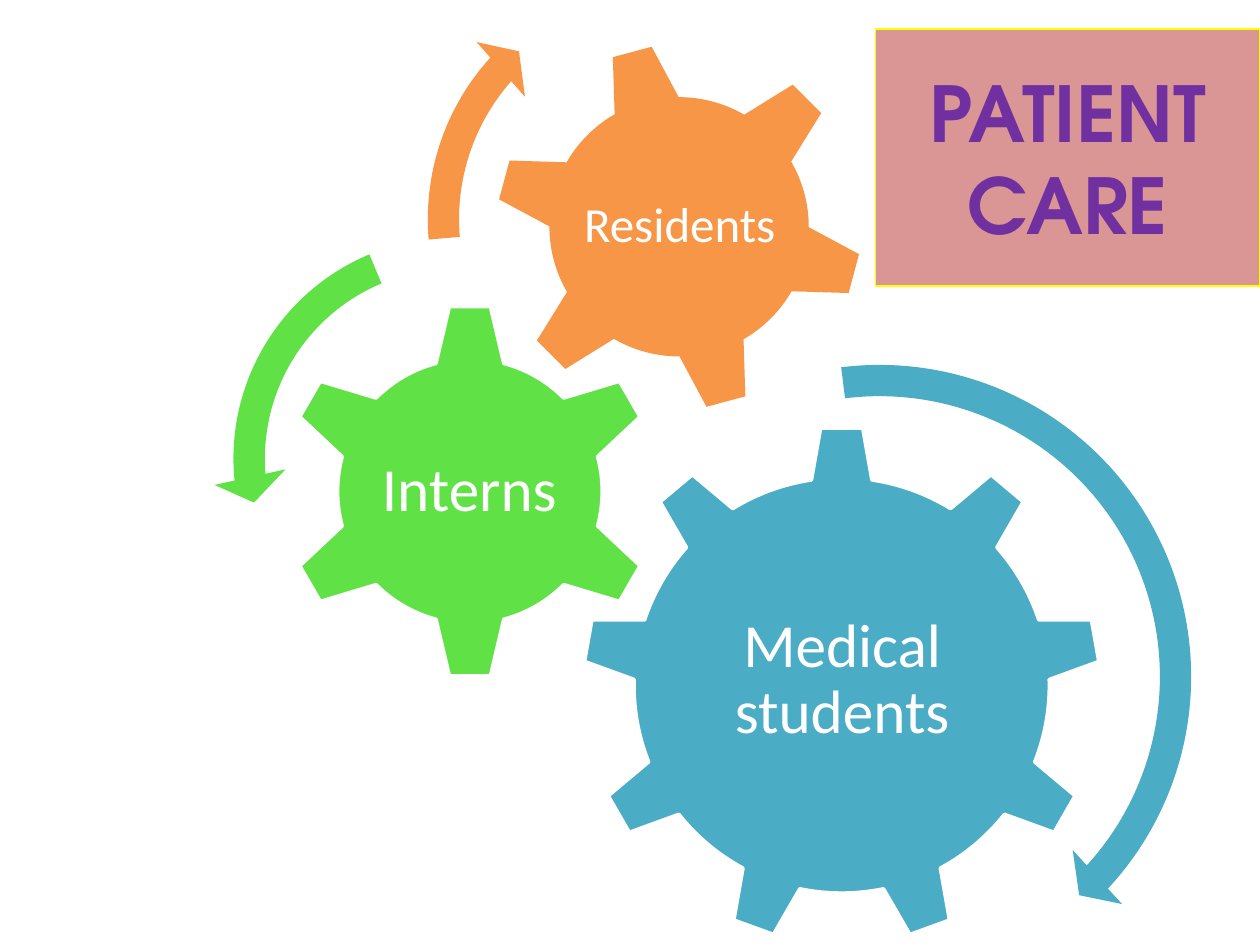
from pptx import Presentation
from pptx.dml.color import RGBColor
from pptx.enum.shapes import MSO_SHAPE
from pptx.enum.text import MSO_ANCHOR, PP_ALIGN
from pptx.util import Inches, Pt


def paint(fmt, color):
    fmt.solid()
    fmt.fore_color.rgb = RGBColor.from_string(color)


def style(frame, font, size, color, bold=False):
    frame.word_wrap = True
    frame.vertical_anchor = MSO_ANCHOR.MIDDLE
    para = frame.paragraphs[0]
    para.alignment = PP_ALIGN.CENTER
    for run in para.runs:
        run.font.name = font
        run.font.size = Pt(size)
        run.font.bold = bold
        paint(run.font.fill, color)


BLUE, GREEN, ORANGE = "4BACC6", "60E146", "F79646"

prs = Presentation()
prs.slide_width, prs.slide_height = Inches(10), Inches(7.5)
slide = prs.slides.add_slide(prs.slide_layouts[5])
shapes = slide.shapes

title = shapes.title
title.left, title.top = Inches(6.95), Inches(0.23)
title.width, title.height = Inches(3.05), Inches(2.04)
title.text_frame.text = "PATIENT CARE"
style(title.text_frame, "TeX Gyre Adventor", 44, "7030A0", True)
paint(title.fill, "D99694")
paint(title.line.fill, "FFFF00")
title.line.width = Pt(0.75)

gears = [
    (MSO_SHAPE.GEAR_9, 4.62, 3.38, 4.12, 0, BLUE,
     "Medical students", 35, (5.45, 4.34, 2.47, 2.12), 0.05),
    (MSO_SHAPE.GEAR_6, 2.23, 2.4, 3, 0, GREEN,
     "Interns", 35, (2.98, 3.16, 1.49, 1.48), 0.05),
    (MSO_SHAPE.GEAR_6, 3.92, 0.33, 2.94, 345, ORANGE,
     "Residents", 28, (4.57, 0.97, 1.65, 1.65), 0.04),
]
for kind, left, top, size, turn, color, label, points, area, inset in gears:
    gear = shapes.add_shape(kind, Inches(left), Inches(top), Inches(size), Inches(size))
    gear.shadow.inherit = False
    gear.rotation = turn
    paint(gear.fill, color)
    if turn:
        gear.line.fill.background()
    else:
        paint(gear.line.fill, "FFFFFF")
        gear.line.width = Pt(2)

    frame = shapes.add_textbox(*map(Inches, area)).text_frame
    frame.margin_left = frame.margin_right = Inches(inset)
    frame.margin_top = frame.margin_bottom = Inches(inset)
    frame.text = label
    frame.paragraphs[0].line_spacing = 0.9
    style(frame, "Calibri", points, "FFFFFF")

arrows = [
    (MSO_SHAPE.CIRCULAR_ARROW, 4.34, 2.73, 5.28, BLUE,
     (0.047, 2.99, 25.567, 157.765, 0.055)),
    (MSO_SHAPE.LEFT_CIRCULAR_ARROW, 1.69, 1.72, 3.84, GREEN,
     (0.065, 4.3, 104.891, 148.378, 0.075)),
    (MSO_SHAPE.CIRCULAR_ARROW, 3.23, -0.33, 4.14, ORANGE,
     (0.06, 3.941, 133.138, 105.082, 0.07)),
]
for kind, left, top, size, color, bends in arrows:
    arrow = shapes.add_shape(kind, Inches(left), Inches(top), Inches(size), Inches(size))
    arrow.shadow.inherit = False
    paint(arrow.fill, color)
    arrow.line.fill.background()
    for i, bend in enumerate(bends):
        arrow.adjustments[i] = bend

prs.save("out.pptx")
